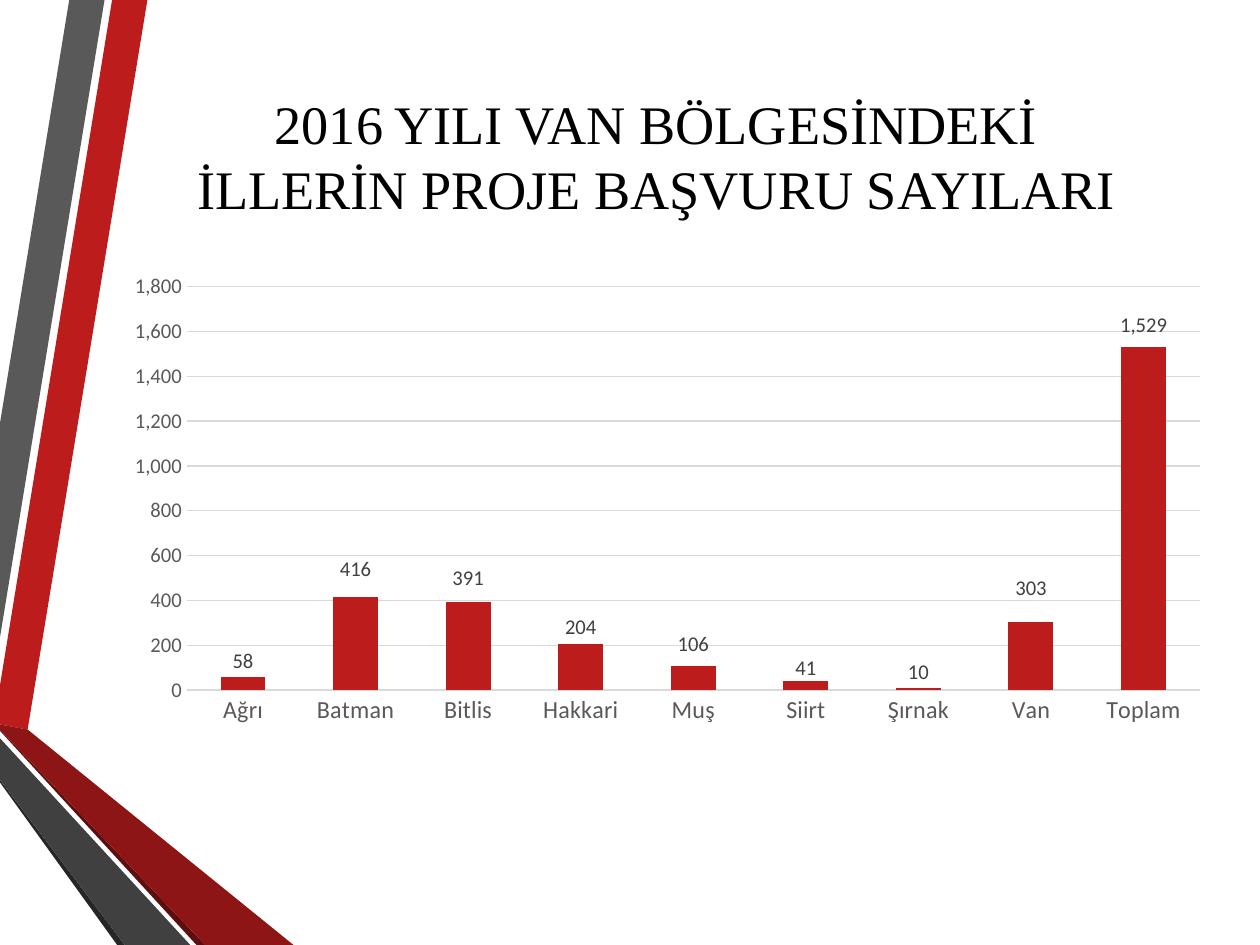
from dataclasses import dataclass

from lxml import etree
from pptx import Presentation
from pptx import util as u
from pptx.chart import data
from pptx.dml.color import RGBColor
from pptx.enum import chart as ch, text
from pptx.oxml.ns import qn


@dataclass(frozen=True)
class Theme:
    red: str = "BC1C1C"
    dark_red: str = "8D1515"
    deep_red: str = "5E0E0E"
    grey: str = "595959"
    dark_grey: str = "404040"
    deep_grey: str = "262626"
    rule: str = "D9D9D9"
    ink: str = "000000"
    title_font: str = "Times New Roman"
    chart_font: str = "Calibri"
    title_size: float = 31
    category_size: float = 14
    value_size: float = 12


COLUMNS, ROWS = 10, 7.5
NUMBER_FORMAT = "#,##0"
LABEL_EXTENSION = "{CE6537A1-D6FC-4f65-9D91-7224C49458BB}"
CHART_2012 = "http://schemas.microsoft.com/office/drawing/2012/chart"


def apply(target, formats):
    for name, value in formats.items():
        setattr(target, name, value)


class Deck:
    def __init__(self, theme):
        self.theme = theme
        self.file = Presentation()
        self.file.slide_width = u.Inches(COLUMNS)
        self.file.slide_height = u.Inches(ROWS)
        self.cell = self.file.slide_width // COLUMNS
        self.slide = None

    def grid(self, *lengths):
        return [round(length * self.cell) for length in lengths]

    def place(self, box):
        return dict(zip(("left", "top", "width", "height"), self.grid(*box)))

    def style(self, font, face, size, color):
        apply(font, {"name": face, "size": u.Pt(size), "bold": False})
        font.color.rgb = RGBColor.from_string(color)

    def add_slide(self):
        self.slide = self.file.slides.add_slide(self.file.slide_layouts[5])

    def title(self, lines, box):
        heading = self.slide.shapes.title
        apply(heading, self.place(box))
        frame = heading.text_frame
        frame.text = "\v".join(lines)
        apply(frame, {
            "word_wrap": True,
            "auto_size": text.MSO_AUTO_SIZE.NONE,
            "vertical_anchor": text.MSO_ANCHOR.MIDDLE,
            "margin_top": u.Inches(0.07),
            "margin_right": u.Inches(0.27),
        })
        paragraph = frame.paragraphs[0]
        apply(paragraph, {"alignment": text.PP_ALIGN.CENTER, "line_spacing": 1.0})
        for run in paragraph.runs:
            self.style(run.font, self.theme.title_font, self.theme.title_size, self.theme.ink)

    def stripe(self, color, corners):
        start, *rest = [self.grid(*corner) for corner in corners]
        builder = self.slide.shapes.build_freeform(*start)
        builder.add_line_segments(rest, close=True)
        band = builder.convert_to_shape()
        band.shadow.inherit = False
        band.fill.solid()
        band.fill.fore_color.rgb = RGBColor.from_string(color)
        band.line.fill.background()

    def rule(self, line):
        line.color.rgb = RGBColor.from_string(self.theme.rule)
        line.width = u.Pt(0.75)

    def column_chart(self, counts, label_lifts, box, plot_area):
        theme = self.theme
        source = data.CategoryChartData(number_format=NUMBER_FORMAT)
        source.categories = list(counts)
        source.add_series("Series 1", list(counts.values()))
        chart = self.slide.shapes.add_chart(
            ch.XL_CHART_TYPE.COLUMN_STACKED, *self.grid(*box), source).chart
        apply(chart, {"has_legend": False, "has_title": False})
        self.style(chart.font, theme.chart_font, 10, theme.ink)

        for axis, size in ((chart.category_axis, theme.category_size),
                           (chart.value_axis, theme.value_size)):
            apply(axis, {"major_tick_mark": ch.XL_TICK_MARK.NONE,
                         "minor_tick_mark": ch.XL_TICK_MARK.NONE})
            self.style(axis.tick_labels.font, theme.chart_font, size, theme.grey)
        self.rule(chart.category_axis.format.line)
        values = chart.value_axis
        apply(values, {"minimum_scale": 0, "maximum_scale": 1800, "major_unit": 200})
        values.format.line.fill.background()
        self.rule(values.major_gridlines.format.line)
        apply(values.tick_labels, {"number_format": NUMBER_FORMAT,
                                   "number_format_is_linked": False})

        plot = chart.plots[0]
        apply(plot, {"gap_width": 150, "overlap": 100, "vary_by_categories": False})
        columns = plot.series[0]
        columns.format.fill.solid()
        columns.format.fill.fore_color.rgb = RGBColor.from_string(theme.red)
        labels = columns.data_labels
        apply(labels, {"show_value": True, "number_format": NUMBER_FORMAT,
                       "number_format_is_linked": False,
                       "position": ch.XL_LABEL_POSITION.CENTER})
        self.style(labels.font, theme.chart_font, theme.value_size, theme.dark_grey)
        for index in range(len(counts)):
            label = columns.points[index].data_label
            label.position = ch.XL_LABEL_POSITION.CENTER
            self.style(label.font, theme.chart_font, theme.value_size, theme.dark_grey)
        chart_xml = chart.element
        for label_xml, lift in zip(chart_xml.iter(qn("c:dLbl")), label_lifts):
            self.layout(label_xml, 1, {"x": 0, "y": -lift})
        self.hide_leader_lines(chart_xml.find(".//" + qn("c:ser") + "/" + qn("c:dLbls")))

        area = chart_xml.find(".//" + qn("c:plotArea"))
        for automatic in area.findall(qn("c:layout")):
            area.remove(automatic)
        modes = {"layoutTarget": "inner", "xMode": "edge", "yMode": "edge"}
        self.layout(area, 0, modes | dict(zip("xywh", plot_area)))

    def hide_leader_lines(self, labels_xml):
        for shown in labels_xml.findall(qn("c:showLeaderLines")):
            labels_xml.remove(shown)
        etree.SubElement(labels_xml, qn("c:showLeaderLines")).set("val", "0")
        extensions = etree.SubElement(labels_xml, qn("c:extLst"))
        extension = etree.SubElement(extensions, qn("c:ext"), nsmap={"c15": CHART_2012})
        extension.set("uri", LABEL_EXTENSION)
        etree.SubElement(extension, f"{{{CHART_2012}}}showLeaderLines").set("val", "0")

    def layout(self, parent, position, settings):
        layout = etree.Element(qn("c:layout"))
        manual = etree.SubElement(layout, qn("c:manualLayout"))
        for name, value in settings.items():
            etree.SubElement(manual, qn("c:" + name)).set("val", str(value))
        parent.insert(position, layout)


def main():
    theme = Theme()
    deck = Deck(theme)
    deck.add_slide()
    stripes = (
        (theme.red, [(0, 5.44), (0, 5.75), (0.22, 5.79), (1.17, 0), (0.89, 0)]),
        (theme.grey, [(0.83, 0), (0.55, 0), (0, 3.36), (0, 5.06)]),
        (theme.deep_grey, [(0, 6.19), (0, 6.21), (0.93, ROWS), (0.99, ROWS)]),
        (theme.deep_red, [(0, 5.79), (0, 5.8), (1.56, ROWS), (1.63, ROWS)]),
        (theme.dark_red, [(0, 5.79), (1.63, ROWS), (2.33, ROWS), (0.22, 5.79), (0, 5.75)]),
        (theme.dark_grey, [(0, 6.19), (0.99, ROWS), (1.51, ROWS), (0, 5.86)]),
    )
    for color, corners in stripes:
        deck.stripe(color, corners)
    deck.title(["2016 YILI VAN BÖLGESİNDEKİ", "İLLERİN PROJE BAŞVURU SAYILARI"],
               (0.79, 0.4, 9, 1.64))
    applications = {"Ağrı": 58, "Batman": 416, "Bitlis": 391, "Hakkari": 204, "Muş": 106,
                    "Siirt": 41, "Şırnak": 10, "Van": 303, "Toplam": 1529}
    deck.column_chart(applications,
                      label_lifts=(0.04, 0.13, 0.12, 0.07, 0.06, 0.03, 0.03, 0.12, 0.34),
                      box=(1.07, 2.05, 8.71, 4.51),
                      plot_area=(0.03, 0.05, 0.94, 0.71))
    deck.file.save("out.pptx")


if __name__ == "__main__":
    main()
